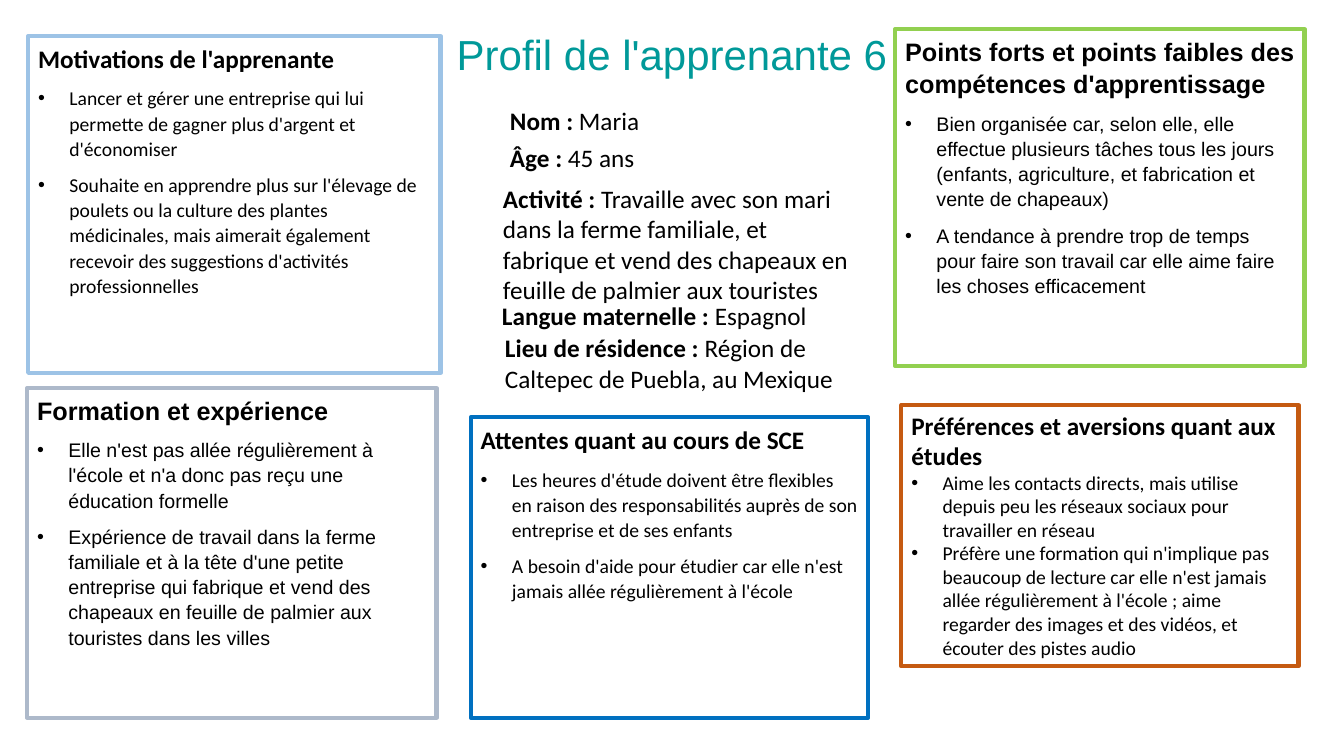
from lxml import etree
from pptx import Presentation
from pptx import util as u
from pptx.dml.color import RGBColor
from pptx.enum import shapes, text
from pptx.oxml.ns import qn

BLACK = RGBColor(0x00, 0x00, 0x00)
WHITE = RGBColor(0xFF, 0xFF, 0xFF)
TEAL = RGBColor(0x00, 0x99, 0x99)
BLUE = RGBColor(0x00, 0x70, 0xC0)
SKY = RGBColor(0x9D, 0xC3, 0xE6)
GREEN = RGBColor(0x92, 0xD0, 0x50)
GREY = RGBColor(0xAD, 0xB9, 0xCA)
ORANGE = RGBColor(0xC5, 0x5A, 0x11)

CARDS = [
    ((4.67, 4.14, 3.94, 2.98), BLUE, "Calibri", "Attentes quant au cours de SCE", [
        "Les heures d'étude doivent être flexibles en raison des responsabilités "
        "auprès de son entreprise et de ses enfants",
        "A besoin d'aide pour étudier car elle n'est jamais allée régulièrement à l'école"]),
    ((0.28, 0.36, 4.09, 3.34), SKY, "Calibri", "Motivations de l'apprenante", [
        "Lancer et gérer une entreprise qui lui permette de gagner plus d'argent et d'économiser",
        "Souhaite en apprendre plus sur l'élevage de poulets ou la culture des plantes "
        "médicinales, mais aimerait également recevoir des suggestions d'activités "
        "professionnelles"]),
    ((8.88, 0.29, 4.06, 3.34), GREEN, "Arial",
     "Points forts et points faibles des compétences d'apprentissage", [
         "Bien organisée car, selon elle, elle effectue plusieurs tâches tous les jours "
         "(enfants, agriculture, et fabrication et vente de chapeaux)",
         "A tendance à prendre trop de temps pour faire son travail car elle aime faire "
         "les choses efficacement"]),
    ((0.27, 3.85, 4.06, 3.27), GREY, "Arial", "Formation et expérience", [
        "Elle n'est pas allée régulièrement à l'école et n'a donc pas reçu une "
        "éducation formelle",
        "Expérience de travail dans la ferme familiale et à la tête d'une petite "
        "entreprise qui fabrique et vend des chapeaux en feuille de palmier aux "
        "touristes dans les villes"]),
]
PREFERENCES = ((8.94, 4.02, 3.94, 2.59), ORANGE, "Calibri",
               "Préférences et aversions quant aux études", [
    "Aime les contacts directs, mais utilise depuis peu les réseaux sociaux pour "
    "travailler en réseau",
    "Préfère une formation qui n'implique pas beaucoup de lecture car elle n'est jamais "
    "allée régulièrement à l'école ; aime regarder des images et des vidéos, et "
    "écouter des pistes audio"])
FACTS = [
    ((4.96, 1.0, 3.76, 0.4), "Nom :", " Maria"),
    ((4.96, 1.36, 3.17, 0.4), "Âge :", " 45 ans"),
    ((4.89, 1.77, 3.71, 1.01), "Activité :",
     " Travaille avec son mari dans la ferme familiale, et fabrique et vend des "
     "chapeaux en feuille de palmier aux touristes"),
    ((4.88, 2.93, 3.45, 0.4), "Langue maternelle :", " Espagnol"),
    ((4.91, 3.25, 3.69, 0.71), "Lieu de résidence :",
     " Région de Caltepec de Puebla, au Mexique"),
]


class ProfileSlide:
    heading_size = 18
    item_size = 14
    indent = u.Inches(0.31)

    def __init__(self, slide):
        self.slide = slide

    def style(self, run, font, size, color=BLACK, bold=False):
        run.font.name = font
        run.font.size = u.Pt(size)
        run.font.bold = bold
        run.font.color.rgb = color

    def title(self, box, wording):
        title = self.slide.shapes.title
        title.left, title.top, title.width, title.height = map(u.Inches, box)
        frame = title.text_frame
        frame.text = wording
        frame.word_wrap = False
        frame.auto_size = text.MSO_AUTO_SIZE.SHAPE_TO_FIT_TEXT
        frame.vertical_anchor = text.MSO_ANCHOR.TOP
        line = frame.paragraphs[0]
        line.alignment = text.PP_ALIGN.LEFT
        line.line_spacing = 0.9
        line.space_before = u.Pt(10)
        self.style(line.runs[0], "Arial", 30, TEAL)

    def bullet(self, paragraph):
        properties = paragraph._p.get_or_add_pPr()
        properties.set("marL", str(self.indent))
        properties.set("indent", str(-self.indent))
        etree.SubElement(properties, qn("a:buFont")).set("typeface", "Arial")
        etree.SubElement(properties, qn("a:buChar")).set("char", "•")

    def card(self, box, border, font, heading, items, compact=False):
        card = self.slide.shapes.add_shape(
            shapes.MSO_SHAPE.RECTANGLE, *map(u.Inches, box))
        card.shadow.inherit = False
        card.line.color.rgb = border
        card.line.width = u.Pt(3)
        frame = card.text_frame
        frame.word_wrap = True
        frame.vertical_anchor = text.MSO_ANCHOR.TOP
        if compact:
            card.fill.background()
            frame.auto_size = text.MSO_AUTO_SIZE.SHAPE_TO_FIT_TEXT
        else:
            card.fill.solid()
            card.fill.fore_color.rgb = WHITE
        frame.text = "\n".join([heading, *items])
        for index, paragraph in enumerate(frame.paragraphs):
            paragraph.alignment = text.PP_ALIGN.LEFT
            if not compact:
                paragraph.line_spacing = 1.07
                paragraph.space_after = u.Pt(8)
            if index:
                self.bullet(paragraph)
            size = self.item_size if index else self.heading_size
            self.style(paragraph.runs[0], font, size, bold=index == 0)

    def fact(self, box, label, value):
        frame = self.slide.shapes.add_textbox(*map(u.Inches, box)).text_frame
        frame.word_wrap = True
        frame.auto_size = text.MSO_AUTO_SIZE.SHAPE_TO_FIT_TEXT
        for wording, bold in ((label, True), (value, False)):
            run = frame.paragraphs[0].add_run()
            run.text = wording
            self.style(run, "Calibri", self.heading_size, bold=bold)


def main():
    deck = Presentation()
    deck.slide_width = u.Inches(13.33)
    deck.slide_height = u.Inches(7.5)
    profile = ProfileSlide(deck.slides.add_slide(deck.slide_layouts[5]))
    profile.title((4.43, 0.29, 4.51, 0.56), "Profil de l'apprenante 6")
    for card in CARDS:
        profile.card(*card)
    for fact in FACTS:
        profile.fact(*fact)
    profile.card(*PREFERENCES, compact=True)
    deck.save("out.pptx")


if __name__ == "__main__":
    main()
